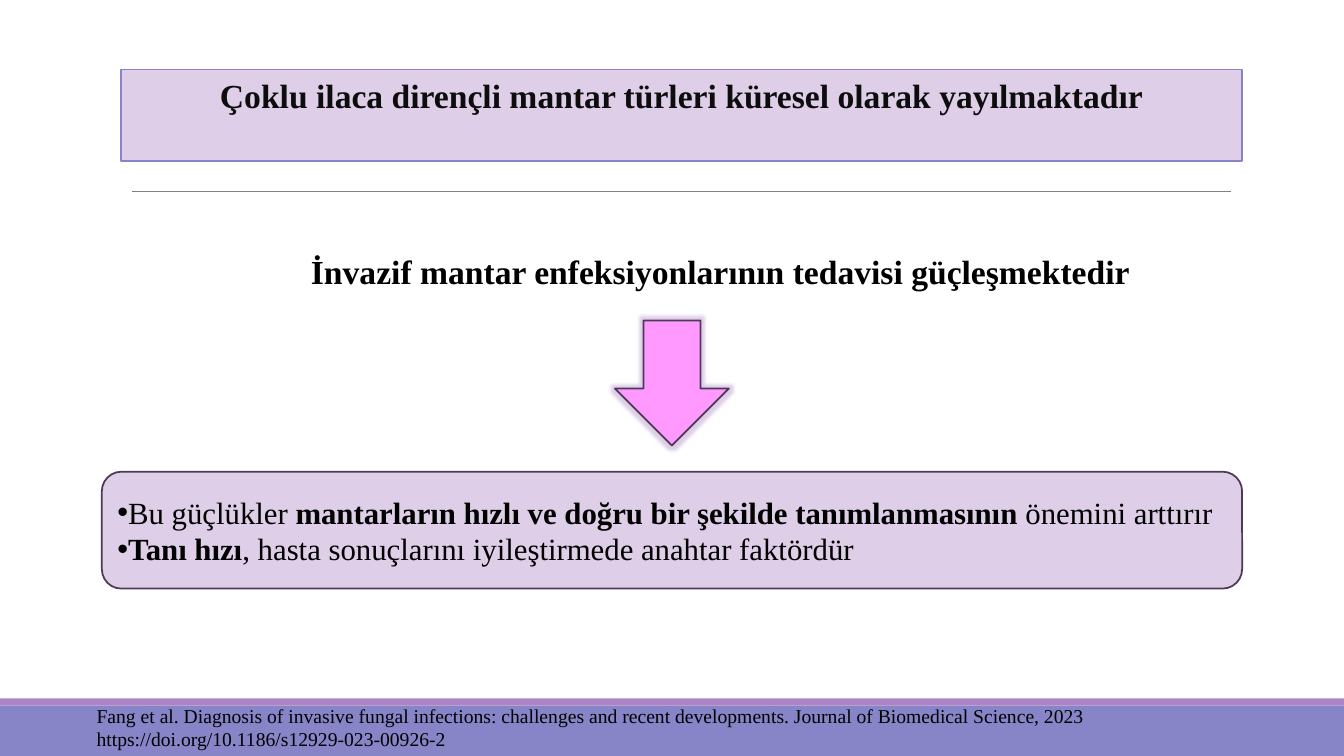
from lxml.etree import SubElement
from pptx import Presentation
from pptx.dml.color import RGBColor
from pptx.enum.shapes import MSO_CONNECTOR, MSO_SHAPE
from pptx.enum.text import MSO_ANCHOR, PP_ALIGN
from pptx.oxml.ns import qn
from pptx.util import Inches, Pt

HUES = {
    "band": "8784C7", "strip": "AD84C6", "rule": "808080", "pale": "DECEE8",
    "edge": "4C3A57", "pink": "FF99FF", "title": "0D0D0D", "text": "000000",
}
FONT = "Times New Roman"
POINTS = [
    [("Bu güçlükler ", False),
     ("mantarların hızlı ve doğru bir şekilde tanımlanmasının ", True),
     ("önemini arttırır", False)],
    [("Tanı hızı", True),
     (", hasta sonuçlarını iyileştirmede anahtar faktördür", False)],
]
SOURCE = ("Fang et al. Diagnosis of invasive fungal infections: challenges and "
          "recent developments. Journal of Biomedical Science, 2023 "
          "https://doi.org/10.1186/s12929-023-00926-2")


def hue(name):
    """Return the named colour."""
    return RGBColor.from_string(HUES[name])


def place(box):
    """Turn a box in inches into lengths."""
    return [Inches(side) for side in box]


def paint(shape, fill, line=None):
    """Fill and outline a shape."""
    shape.fill.solid()
    shape.fill.fore_color.rgb = hue(fill)
    if line:
        shape.line.color.rgb = hue(line)
        shape.line.width = Pt(1.25)
    else:
        shape.line.fill.background()


def draw(slide, kind, box, fill, line=None):
    """Add a preset shape without shadow."""
    shape = slide.shapes.add_shape(kind, *place(box))
    shape.shadow.inherit = False
    paint(shape, fill, line)
    return shape


def style(para, size, color="text", bold=None, align=PP_ALIGN.LEFT):
    """Set the font and alignment of a paragraph."""
    para.alignment = align
    font = para.font
    font.name, font.size, font.bold = FONT, Pt(size), bold
    font.color.rgb = hue(color)


def write(slide, box, text, size, **look):
    """Add a wrapped text box with one paragraph."""
    frame = slide.shapes.add_textbox(*place(box)).text_frame
    frame.word_wrap = True
    para = frame.paragraphs[0]
    para.text = text
    style(para, size, **look)
    return frame


def head(slide, box):
    """Fill the title box and draw the rule below it."""
    left, top, width, height = box
    title = slide.shapes.title
    title.left, title.top, title.width, title.height = place(box)
    paint(title, "pale", "band")
    frame = title.text_frame
    frame.word_wrap = True
    frame.vertical_anchor = MSO_ANCHOR.TOP
    para = frame.paragraphs[0]
    para.text = "Çoklu ilaca dirençli mantar türleri küresel olarak yayılmaktadır"
    para.line_spacing = 1.0
    para.space_before = Pt(0)
    style(para, 24, "title", True, PP_ALIGN.CENTER)
    y = top + height + 0.3
    rule = slide.shapes.add_connector(
        MSO_CONNECTOR.STRAIGHT,
        *place((left + 0.11, y, left + width - 0.11, y)))
    rule.line.color.rgb = hue("rule")
    rule.line.width = Pt(0.5)
    SubElement(rule._element.spPr, qn("a:effectLst"))


def arrow(slide, box):
    """Draw the glowing arrow."""
    shape = draw(slide, MSO_SHAPE.DOWN_ARROW, box, "pink", "edge")
    effects = shape._element.spPr.find(qn("a:effectLst"))
    glow = SubElement(effects, qn("a:glow"), rad="63500")
    tint = SubElement(glow, qn("a:srgbClr"), val=HUES["strip"])
    SubElement(tint, qn("a:alpha"), val="40000")


def panel(slide, box):
    """Draw the rounded panel with its bullets."""
    shape = draw(slide, MSO_SHAPE.ROUNDED_RECTANGLE, box, "pale", "edge")
    frame = shape.text_frame
    frame.word_wrap = True
    frame.vertical_anchor = MSO_ANCHOR.MIDDLE
    for i, parts in enumerate(POINTS):
        para = frame.add_paragraph() if i else frame.paragraphs[0]
        props = para._p.get_or_add_pPr()
        SubElement(props, qn("a:buFont"), typeface="Arial")
        SubElement(props, qn("a:buChar"), char="•")
        style(para, 22, align=PP_ALIGN.JUSTIFY)
        for text, bold in parts:
            run = para.add_run()
            run.text = text
            run.font.bold = bold


def foot(slide, box):
    """Draw the footer bands and the citation."""
    left, top, width, height = box
    draw(slide, MSO_SHAPE.RECTANGLE,
         (left, top + 0.07, width, height - 0.07), "band")
    draw(slide, MSO_SHAPE.RECTANGLE, (left, top, width, 0.07), "strip")
    write(slide, (left + 0.86, top, 12.24, height), SOURCE, 14)


def main():
    """Build and save the slide."""
    deck = Presentation()
    deck.slide_width, deck.slide_height = Inches(13.33), Inches(7.5)
    slide = deck.slides.add_slide(deck.slide_layouts[5])
    foot(slide, (0, 6.93, 13.33, 0.57))
    head(slide, (1.2, 0.69, 11.12, 0.91))
    frame = write(slide, (1.62, 2.39, 11.05, 0.6),
                  "İnvazif mantar enfeksiyonlarının tedavisi güçleşmektedir",
                  24, bold=True, align=PP_ALIGN.CENTER)
    frame.vertical_anchor = MSO_ANCHOR.MIDDLE
    arrow(slide, (6.1, 3.18, 1.13, 1.24))
    panel(slide, (1.01, 4.68, 11.31, 1.16))
    deck.save("out.pptx")


if __name__ == "__main__":
    main()
